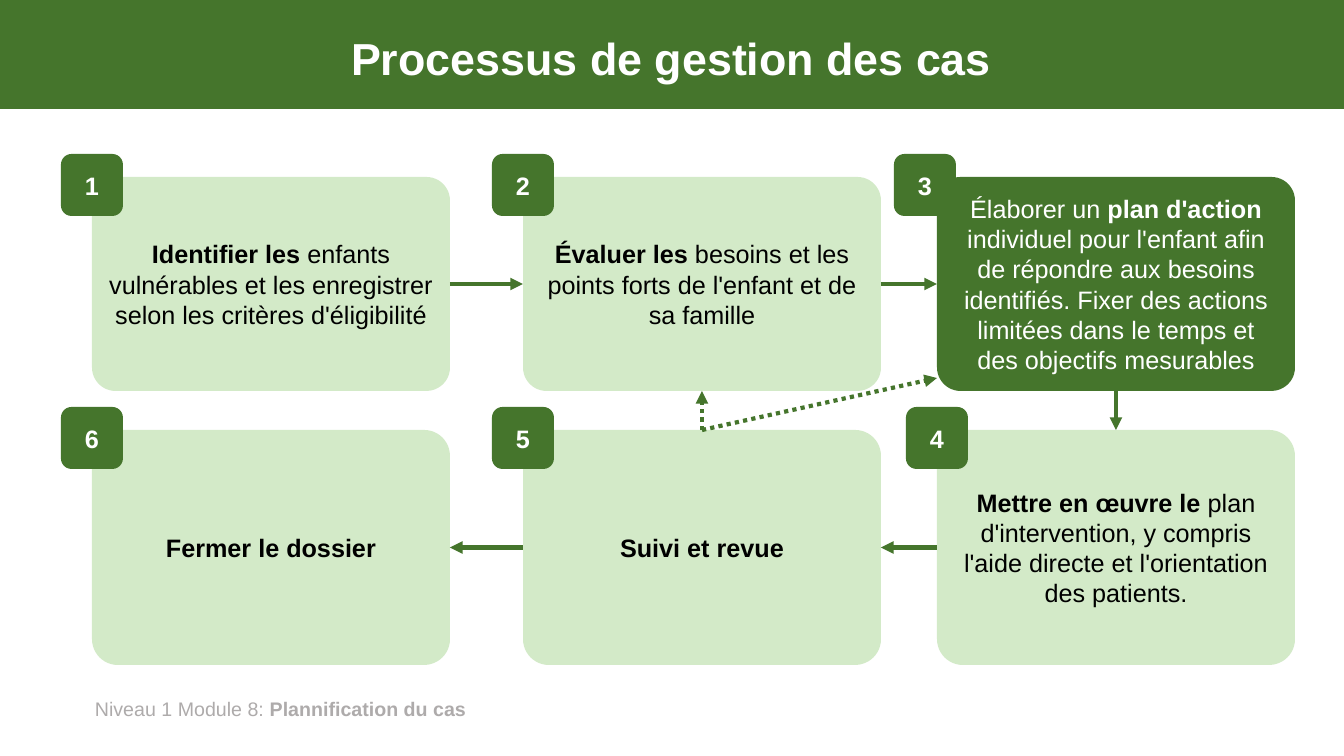
"""Build the case management process slide."""
from lxml.etree import SubElement
from pptx import Presentation
from pptx.dml.color import RGBColor
from pptx.enum.dml import MSO_LINE
from pptx.enum.shapes import MSO_CONNECTOR, MSO_SHAPE
from pptx.enum.text import MSO_ANCHOR, MSO_AUTO_SIZE, PP_ALIGN
from pptx.oxml.ns import qn
from pptx.util import Emu, Pt

TITLE = "Processus de gestion des cas"
FOOTER = [("Niveau 1 Module 8: ", False), ("Plannification du cas", True)]
GREEN, PALE, WHITE, BLACK, GREY = "45752C", "D3EAC8", "FFFFFF", "000000", "AEABAB"

# number: (column, row, badge offset, fill, text colour, runs)
STEPS = {
    1: (0, 0, 31, PALE, BLACK, [
        ("Identifier les ", True),
        ("enfants vulnérables et les enregistrer selon les critères d'éligibilité", False)]),
    2: (1, 0, 31, PALE, BLACK, [
        ("Évaluer les ", True),
        ("besoins et les points forts de l'enfant et de sa famille", False)]),
    3: (2, 0, 43, GREEN, WHITE, [
        ("Élaborer un ", False),
        ("plan d'action ", True),
        ("individuel pour l'enfant afin de répondre aux besoins identifiés. "
         "Fixer des actions limitées dans le temps et des objectifs mesurables", False)]),
    6: (0, 1, 31, PALE, BLACK, [("Fermer le dossier", True)]),
    5: (1, 1, 31, PALE, BLACK, [("Suivi et revue", True)]),
    4: (2, 1, 31, PALE, BLACK, [
        ("Mettre en œuvre le ", True),
        ("plan d'intervention, y compris l'aide directe et l'orientation des patients.", False)]),
}
TOP, LEFT, BOTTOM, RIGHT = range(4)
ARROWS = [(1, RIGHT, 2, LEFT), (2, RIGHT, 3, LEFT), (3, BOTTOM, 4, TOP),
          (4, LEFT, 5, RIGHT), (5, LEFT, 6, RIGHT), (5, TOP, 2, BOTTOM)]
COLUMNS = [92, 523, 937]
ROWS = [(177, 214), (430, 235)]
CARD_W, BADGE, BADGE_RISE = 358, 62, 23
REVIEW_END = (937, 378)


def px(n):
    return Emu(round(n * 12192000 / 1344))


def rgb(color):
    return RGBColor.from_string(color)


def write(shape, runs, size=18, color=WHITE, align=PP_ALIGN.CENTER,
          anchor=MSO_ANCHOR.MIDDLE, spacing=None, fit=MSO_AUTO_SIZE.NONE):
    tf = shape.text_frame
    tf.word_wrap = True
    tf.auto_size = fit
    tf.vertical_anchor = anchor
    p = tf.paragraphs[0]
    p.alignment = align
    p.line_spacing = spacing
    for text, bold in runs:
        r = p.add_run()
        r.text = text
        r.font.name, r.font.size, r.font.bold = "Arial", Pt(size), bold
        r.font.color.rgb = rgb(color)


def add_box(s, kind, x, y, w, h, fill, radius=None):
    box = s.shapes.add_shape(kind, px(x), px(y), px(w), px(h))
    box.shadow.inherit = False
    box.fill.solid()
    box.fill.fore_color.rgb = rgb(fill)
    box.line.fill.background()
    if radius:
        box.adjustments[0] = radius
    return box


def add_arrow(s, start, start_site, end=None, end_site=None, dotted=False):
    x, y = REVIEW_END
    arrow = s.shapes.add_connector(MSO_CONNECTOR.STRAIGHT, px(x), px(y), px(x), px(y))
    arrow.begin_connect(start, start_site)
    if end is not None:
        arrow.end_connect(end, end_site)
    arrow.line.color.rgb = rgb(GREEN)
    arrow.line.width = Pt(3)
    if dotted:
        arrow.line.dash_style = MSO_LINE.ROUND_DOT
    SubElement(arrow.line._get_or_add_ln(), qn("a:tailEnd"), type="triangle")
    SubElement(arrow.element.spPr, qn("a:effectLst"))


def main():
    prs = Presentation()
    prs.slide_width, prs.slide_height = px(1344), px(756)
    s = prs.slides.add_slide(prs.slide_layouts[5])

    title = s.shapes.title
    title.left, title.top, title.width, title.height = map(px, (92, 13, 1159, 96))
    write(title, [(TITLE, True)], size=32, spacing=0.9)
    band = add_box(s, MSO_SHAPE.RECTANGLE, 0, 0, 1344, 109, GREEN)
    title.element.addprevious(band.element)

    footer = s.shapes.add_textbox(px(85), px(692), px(459), px(34))
    write(footer, FOOTER, size=14, color=GREY, align=PP_ALIGN.LEFT,
          anchor=MSO_ANCHOR.TOP, fit=MSO_AUTO_SIZE.SHAPE_TO_FIT_TEXT)

    cards = {}
    for number, (col, row, offset, fill, color, runs) in STEPS.items():
        x, (y, h) = COLUMNS[col], ROWS[row]
        cards[number] = add_box(s, MSO_SHAPE.ROUNDED_RECTANGLE, x, y, CARD_W, h, fill, 0.11)
        write(cards[number], runs, color=color)
        badge = add_box(s, MSO_SHAPE.ROUNDED_RECTANGLE, x - offset, y - BADGE_RISE,
                        BADGE, BADGE, GREEN, 0.17)
        write(badge, [(str(number), True)])

    for start, start_site, end, end_site in ARROWS:
        add_arrow(s, cards[start], start_site, cards[end], end_site,
                  dotted=(start, end) == (5, 2))
    add_arrow(s, cards[5], TOP, dotted=True)

    prs.save("out.pptx")


if __name__ == "__main__":
    main()
